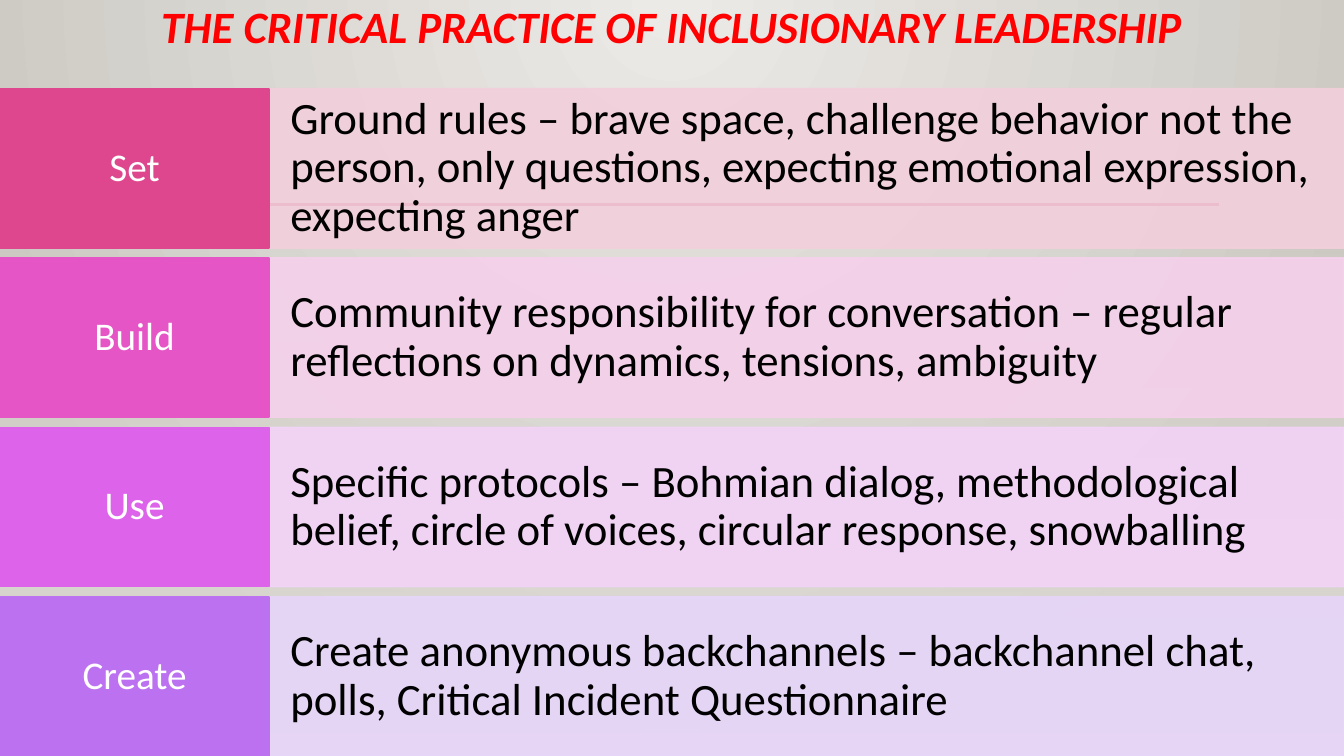
"""Builds the slide on the critical practice of inclusionary leadership."""
from lxml import etree
from pptx import Presentation
from pptx.dml.color import RGBColor
from pptx.enum import shapes, text
from pptx.oxml import parse_xml
from pptx.oxml.ns import nsdecls, qn
from pptx.util import Inches, Pt

TITLE = "THE CRITICAL PRACTICE OF INCLUSIONARY LEADERSHIP"
PRACTICES = [
    ("Set", "Ground rules – brave space, challenge behavior not the person, "
     "only questions, expecting emotional expression, expecting anger", "DE478E", "F2CFDB"),
    ("Build", "Community responsibility for conversation – regular reflections "
     "on dynamics, tensions, ambiguity", "E555C6", "F5D1EB"),
    ("Use", "Specific protocols – Bohmian dialog, methodological belief, "
     "circle of voices, circular response, snowballing", "DD63EB", "F3D3F7"),
    ("Create", "Create anonymous backchannels – backchannel chat, "
     "polls, Critical Incident Questionnaire", "BC72F0", "E7D5F9"),
]
COLORS = {"title": "FF0000", "label": "FFFFFF", "detail": "000000", "rule": "B71E42",
          "center": "ECEAE7", "edge": "CAC7C1", "floor": "DFDBD5"}
FONT = "Calibri"
WIDTH, HEIGHT = 13.33, 7.5
LABEL_WIDTH = 2.67
ROWS_TOP, ROW_HEIGHT, ROW_STEP = 0.88, 1.58, 1.68
RADIAL = ('<a:path path="circle"><a:fillToRect l="43000" t="0" r="43000" b="100000"/></a:path>')
DOWNWARD = '<a:lin ang="5400000" scaled="0"/>'


def set_gradient(fill, owner, start, end, direction, start_opacity=100):
    """Give the owner element a two-stop gradient."""
    fill.gradient()
    gradient = owner.find(".//" + qn("a:gradFill"))
    gradient.getparent().replace(gradient, parse_xml(
        f'<a:gradFill {nsdecls("a")} rotWithShape="1"><a:gsLst>'
        f'<a:gs pos="0"><a:srgbClr val="{start}"><a:alpha val="{start_opacity * 1000}"/>'
        f'</a:srgbClr></a:gs><a:gs pos="100000"><a:srgbClr val="{end}"/></a:gs>'
        f'</a:gsLst>{direction}</a:gradFill>'))


def add_text(frame, words, size, color, alignment):
    """Write one formatted run into the first paragraph."""
    paragraph = frame.paragraphs[0]
    paragraph.alignment = alignment
    paragraph.line_spacing = 0.9
    run = paragraph.add_run()
    run.text = words
    run.font.name = FONT
    run.font.size = Pt(size)
    run.font.color.rgb = RGBColor.from_string(COLORS[color])
    return run


def add_rectangle(slide, left, top, width, height):
    """Add a rectangle without a shadow."""
    shape = slide.shapes.add_shape(shapes.MSO_SHAPE.RECTANGLE, Inches(left), Inches(top),
                                   Inches(width), Inches(height))
    shape.shadow.inherit = False
    return shape


def add_cell(slide, left, top, width, color, margins, opacity=100):
    """Add one coloured cell of a row and return its text frame."""
    cell = add_rectangle(slide, left, top, width, ROW_HEIGHT)
    cell.fill.solid()
    cell.fill.fore_color.rgb = RGBColor.from_string(color)
    cell.line.color.rgb = RGBColor.from_string(color)
    cell.line.width = Pt(1.25)
    for tint in cell._element.spPr.iter(qn("a:srgbClr")):
        etree.SubElement(tint, qn("a:alpha"), val=str(opacity * 1000))
    frame = cell.text_frame
    frame.word_wrap = True
    frame.vertical_anchor = text.MSO_ANCHOR.MIDDLE
    frame.margin_left = frame.margin_right = Inches(margins[0])
    frame.margin_top = frame.margin_bottom = Inches(margins[1])
    return frame


def main():
    """Build and save the slide."""
    presentation = Presentation()
    presentation.slide_width, presentation.slide_height = Inches(WIDTH), Inches(HEIGHT)
    slide = presentation.slides.add_slide(presentation.slide_layouts[5])
    set_gradient(slide.background.fill, slide._element, COLORS["center"], COLORS["edge"], RADIAL)

    title = slide.shapes.title
    title.left, title.top = Inches(0), Inches(0)
    title.width, title.height = Inches(WIDTH), Inches(ROWS_TOP)
    title.text_frame.vertical_anchor = text.MSO_ANCHOR.TOP
    title_run = add_text(title.text_frame, TITLE, 32, "title", text.PP_ALIGN.CENTER)
    title_run.font.bold = title_run.font.italic = True

    rule = slide.shapes.add_connector(shapes.MSO_CONNECTOR.STRAIGHT, Inches(1.59), Inches(2.03),
                                      Inches(12.09), Inches(2.03))
    rule.line.color.rgb = RGBColor.from_string(COLORS["rule"])
    rule.line.width = Pt(2.5)
    etree.SubElement(rule._element.spPr, qn("a:effectLst"))

    floor = add_rectangle(slide, 0, 2.21, WIDTH, HEIGHT - 2.21)
    floor.line.fill.background()
    set_gradient(floor.fill, floor._element, COLORS["floor"], COLORS["floor"], DOWNWARD, 0)

    for index, (label, detail, strong, pale) in enumerate(PRACTICES):
        top = ROWS_TOP + index * ROW_STEP
        frame = add_cell(slide, LABEL_WIDTH, top, WIDTH - LABEL_WIDTH, pale, (0.21, 0.4), 90)
        add_text(frame, detail, 32, "detail", text.PP_ALIGN.LEFT)
        frame = add_cell(slide, 0, top, LABEL_WIDTH, strong, (0.14, 0.16))
        add_text(frame, label, 28, "label", text.PP_ALIGN.CENTER)

    presentation.save("out.pptx")


if __name__ == "__main__":
    main()
